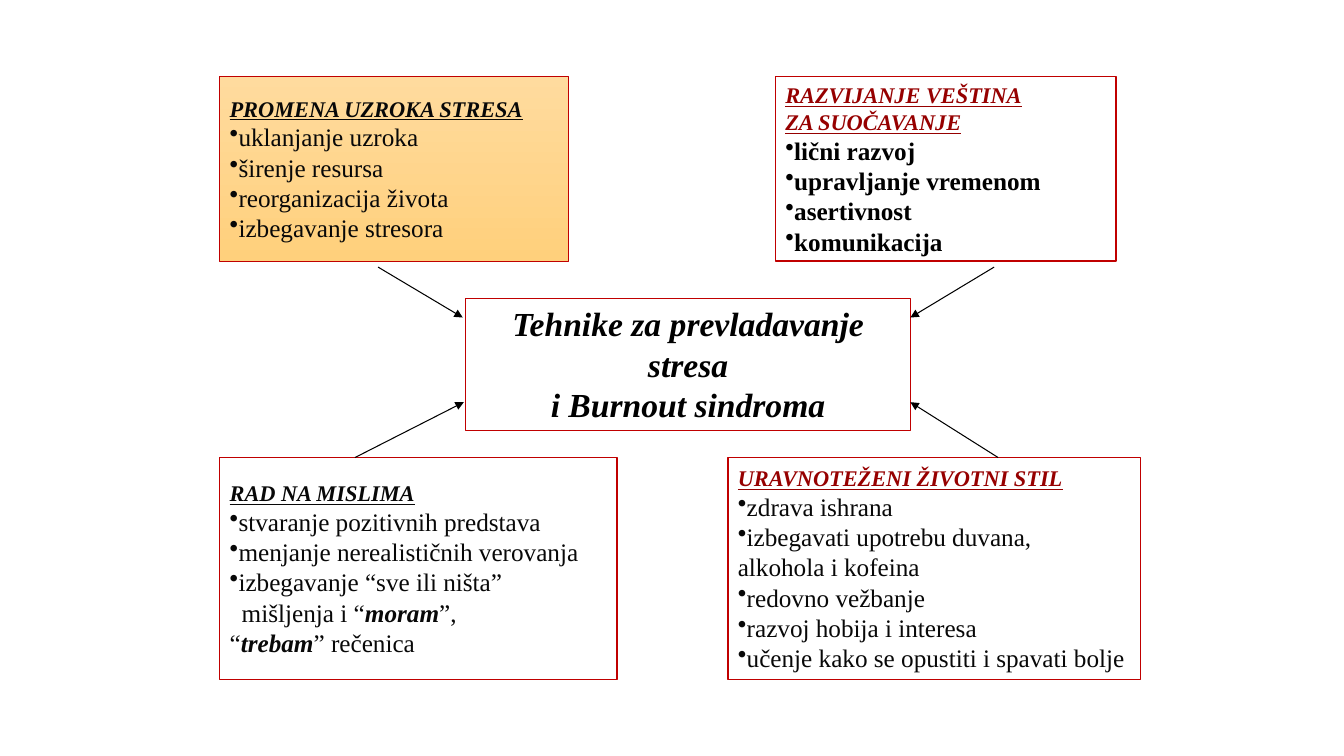
"""Build a slide of four stress-coping groups pointing to a central title."""
from dataclasses import dataclass

from lxml import etree
from pptx import Presentation
from pptx import util as u
from pptx.dml.color import RGBColor
from pptx.enum import shapes, text
from pptx.oxml.ns import qn

WIDTH, HEIGHT = u.Inches(13.33), u.Inches(7.5)
FONT = "Times New Roman"
BLACK, INK, RED, BORDER, WHITE = "000000", "080808", "960000", "C00000", "FFFFFF"
LEFT, TOP_ROW, BOTTOM_ROW = 16.35, 10.13, 60.53
TOP_HEIGHT, BOTTOM_HEIGHT = 24.4, 29.33


@dataclass(frozen=True)
class Style:
    size: int
    color: str
    bold: bool = False
    italic: bool = False
    underline: bool = False


@dataclass(frozen=True)
class Line:
    content: str
    style: Style
    bullet: bool = False
    indent: float = 0


@dataclass(frozen=True)
class Box:
    left: float
    top: float
    width: float
    height: float
    lines: list[Line]
    border: float = 1
    gradient: tuple[str, ...] = ()
    centered: bool = False


@dataclass(frozen=True)
class Arrow:
    start: tuple[float, float]
    end: tuple[float, float]


def heading(color: str) -> Style:
    return Style(16, color, bold=True, italic=True, underline=True)


def bullets(style: Style, *items: str) -> list[Line]:
    return [Line(item, style, bullet=True) for item in items]


TITLE = Style(24, BLACK, bold=True, italic=True)
BODY = Style(18, INK)
STRONG = Style(18, BLACK, bold=True)

BOXES = [
    Box(34.66, 39.47, 33.08, 17.47, [
        Line("Tehnike za prevladavanje stresa", TITLE),
        Line("i Burnout sindroma", TITLE),
    ], centered=True),
    Box(LEFT, TOP_ROW, 25.96, TOP_HEIGHT, [
        Line("PROMENA UZROKA STRESA", heading(INK)),
        *bullets(BODY, "uklanjanje uzroka", "širenje resursa",
                 "reorganizacija života", "izbegavanje stresora"),
    ], border=0.5, gradient=("FFDB9E", "FFD07C")),
    Box(57.69, TOP_ROW, 25.36, TOP_HEIGHT, [
        Line("RAZVIJANJE VEŠTINA", heading(RED)),
        Line("ZA SUOČAVANJE", heading(RED)),
        *bullets(STRONG, "lični razvoj", "upravljanje vremenom",
                 "asertivnost", "komunikacija"),
    ]),
    Box(LEFT, BOTTOM_ROW, 29.56, BOTTOM_HEIGHT, [
        Line("RAD NA MISLIMA", heading(INK)),
        *bullets(BODY, "stvaranje pozitivnih predstava",
                 "menjanje nerealističnih verovanja", "izbegavanje “sve ili ništa”"),
        Line("mišljenja i “*moram*”,", BODY, indent=0.12),
        Line("“*trebam*” rečenica", BODY),
    ]),
    Box(54.16, BOTTOM_ROW, 30.68, BOTTOM_HEIGHT, [
        Line("URAVNOTEŽENI ŽIVOTNI STIL", heading(RED)),
        *bullets(BODY, "zdrava ishrana", "izbegavati upotrebu duvana,"),
        Line("alkohola i kofeina", BODY),
        *bullets(BODY, "redovno vežbanje", "razvoj hobija i interesa",
                 "učenje kako se opustiti i spavati bolje"),
    ]),
]

ARROWS = [
    Arrow((28.13, 35.33), (34.43, 42)),
    Arrow((26.41, BOTTOM_ROW), (34.51, 53.2)),
    Arrow((73.97, 35.33), (67.74, 42)),
    Arrow((74.27, BOTTOM_ROW), (67.74, 53.2)),
]


def rgb(color: str) -> RGBColor:
    return RGBColor.from_string(color)


def across(share: float) -> int:
    return round(WIDTH * share / 100)


def down(share: float) -> int:
    return round(HEIGHT * share / 100)


def write_line(paragraph, line: Line) -> None:
    properties = paragraph._p.get_or_add_pPr()
    properties.set("marL", str(u.Inches(line.indent)))
    properties.set("indent", "0")
    if line.bullet:
        etree.SubElement(properties, qn("a:buChar"), char="•")
    for index, part in enumerate(line.content.split("*")):
        emphasised = index % 2 == 1
        run = paragraph.add_run()
        run.text = part
        run.font.name = FONT
        run.font.size = u.Pt(line.style.size)
        run.font.color.rgb = rgb(line.style.color)
        run.font.bold = line.style.bold or emphasised
        run.font.italic = line.style.italic or emphasised
        run.font.underline = line.style.underline


def draw_box(slide, box: Box) -> None:
    shape = slide.shapes.add_shape(
        shapes.MSO_SHAPE.RECTANGLE, across(box.left), down(box.top),
        across(box.width), down(box.height))
    shape.shadow.inherit = False
    if box.gradient:
        shape.fill.gradient()
        shape.fill.gradient_angle = 270
        for stop, color in zip(shape.fill.gradient_stops, box.gradient):
            stop.color.rgb = rgb(color)
    else:
        shape.fill.solid()
        shape.fill.fore_color.rgb = rgb(WHITE)
    shape.line.color.rgb = rgb(BORDER)
    shape.line.width = u.Pt(box.border)
    frame = shape.text_frame
    frame.word_wrap = True
    frame.vertical_anchor = text.MSO_ANCHOR.TOP if box.centered else text.MSO_ANCHOR.MIDDLE
    for index, line in enumerate(box.lines):
        paragraph = frame.add_paragraph() if index else frame.paragraphs[0]
        paragraph.alignment = text.PP_ALIGN.CENTER if box.centered else text.PP_ALIGN.LEFT
        write_line(paragraph, line)


def draw_arrow(slide, arrow: Arrow) -> None:
    connector = slide.shapes.add_connector(
        shapes.MSO_CONNECTOR.STRAIGHT, across(arrow.start[0]), down(arrow.start[1]),
        across(arrow.end[0]), down(arrow.end[1]))
    connector.line.color.rgb = rgb(BLACK)
    connector.line.width = u.Pt(0.75)
    etree.SubElement(connector.line._get_or_add_ln(), qn("a:tailEnd"), type="triangle")
    etree.SubElement(connector._element.spPr, qn("a:effectLst"))


def main() -> None:
    presentation = Presentation()
    presentation.slide_width, presentation.slide_height = WIDTH, HEIGHT
    slide = presentation.slides.add_slide(presentation.slide_layouts[6])
    for box in BOXES:
        draw_box(slide, box)
    for arrow in ARROWS:
        draw_arrow(slide, arrow)
    presentation.save("out.pptx")


if __name__ == "__main__":
    main()
